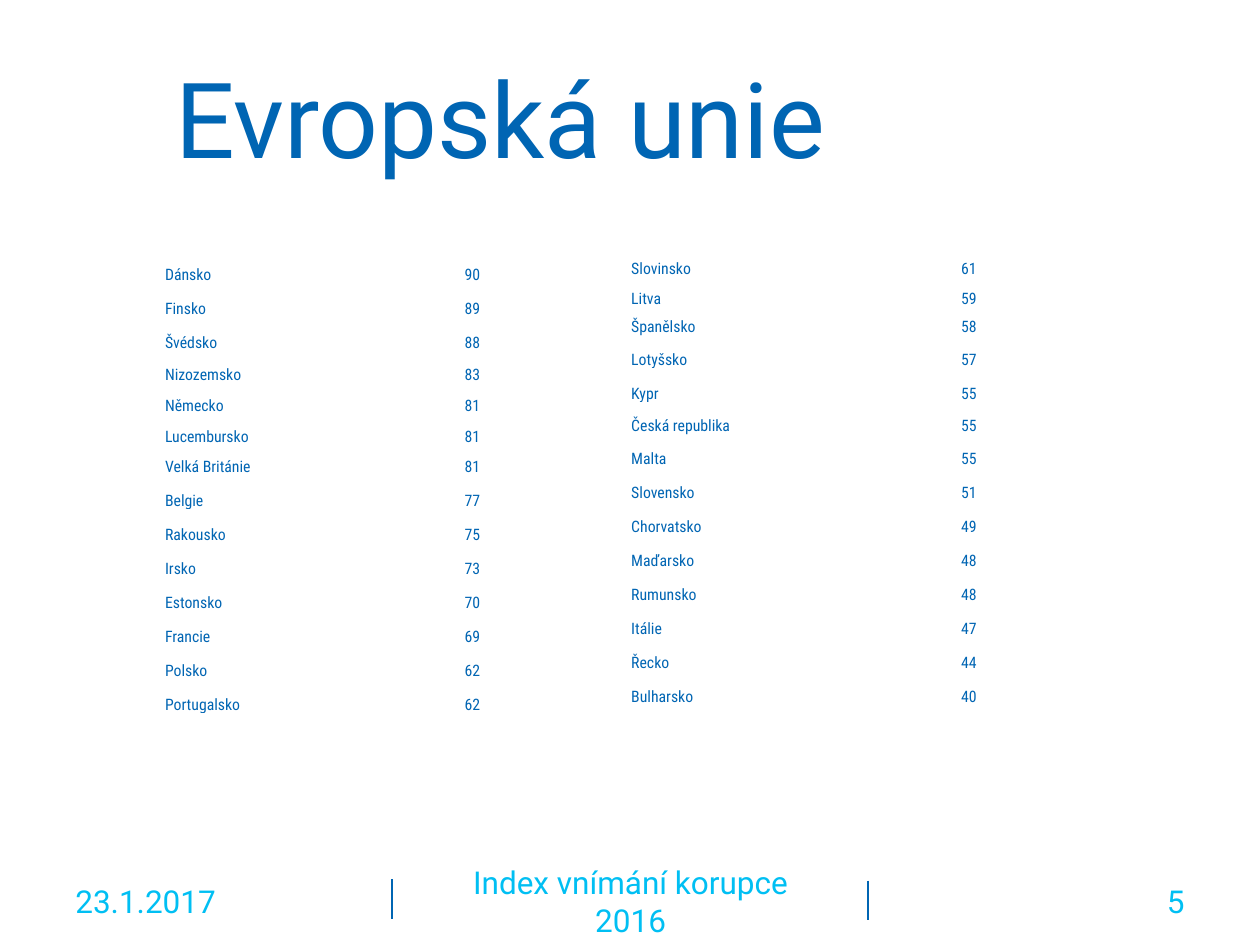
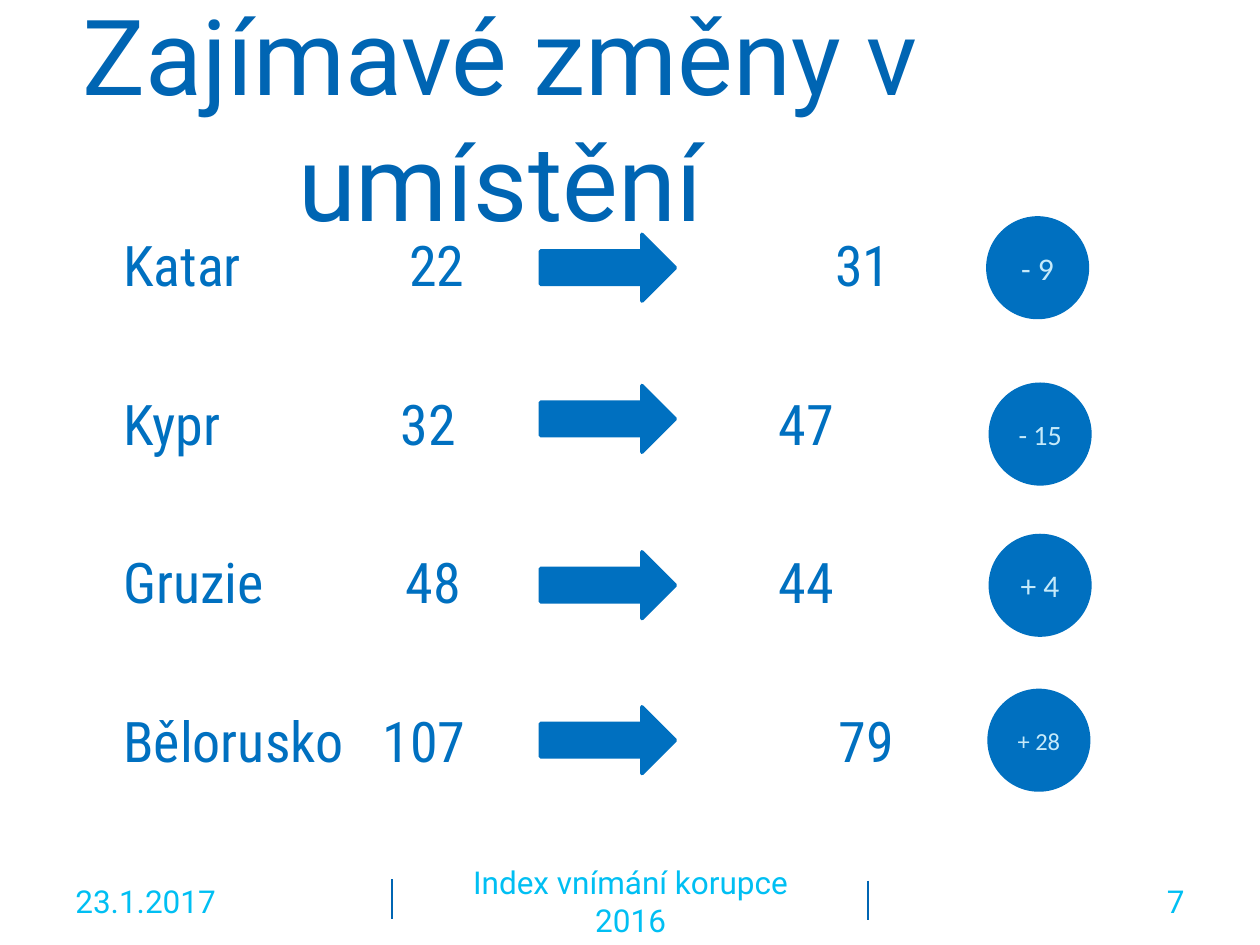
from lxml import etree
from pptx import Presentation
from pptx.dml.color import RGBColor
from pptx.enum import shapes, text
from pptx.oxml import ns
from pptx.util import Inches, Pt

NAVY = RGBColor(0x00, 0x65, 0xB3)
BLUE = RGBColor(0x00, 0x70, 0xC0)
CYAN = RGBColor(0x00, 0xBF, 0xF3)
PALE = RGBColor(0xC6, 0xEA, 0xFA)
WHITE = RGBColor(0xFF, 0xFF, 0xFF)
ROBOTO, CONDENSED, CALIBRI = "Roboto", "Roboto Condensed", "Calibri"
LEFT, CENTER, RIGHT = text.PP_ALIGN.LEFT, text.PP_ALIGN.CENTER, text.PP_ALIGN.RIGHT

EU_FIRST = [
    ("Dánsko", 90, 0.24), ("Finsko", 89, 0.27), ("Švédsko", 88, 0.27),
    ("Nizozemsko", 83, 0.25), ("Německo", 81, 0.25), ("Lucembursko", 81, 0.24),
    ("Velká Británie", 81, 0.24), ("Belgie", 77, 0.27), ("Rakousko", 75, 0.27),
    ("Irsko", 73, 0.27), ("Estonsko", 70, 0.27), ("Francie", 69, 0.27),
    ("Polsko", 62, 0.27), ("Portugalsko", 62, 0.27),
]
EU_SECOND = [
    ("Slovinsko", 61, 0.35), ("Litva", 59, 0.24), ("Španělsko", 58, 0.22),
    ("Lotyšsko", 57, 0.26), ("Kypr", 55, 0.27), ("Česká republika", 55, 0.26),
    ("Malta", 55, 0.26), ("Slovensko", 51, 0.27), ("Chorvatsko", 49, 0.27),
    ("Maďarsko", 48, 0.27), ("Rumunsko", 48, 0.27), ("Itálie", 47, 0.27),
    ("Řecko", 44, 0.27), ("Bulharsko", 40, 0.27),
]
RANKINGS = [
    ("Katar", 22, 31, (2.27, 5.65)),
    ("Kypr", 32, 47, (2.2, 5.2)),
    ("Gruzie", 48, 44, (2.24, 5.2)),
    ("Bělorusko", 107, 79, (2.06, 5.68)),
]
ARROW_TOPS = [1.86, 3.06, 4.38, 5.61]
BADGES = [
    ("- 9", 7.84, 1.73, 18), ("- 15", 7.86, 3.05, 16),
    ("+ 4", 7.86, 4.25, 18), ("+ 28", 7.85, 5.48, 14),
]


class Builder:
    def __init__(self):
        self.deck = Presentation()
        self.deck.slide_width = Inches(10)
        self.deck.slide_height = Inches(7.5)
        self.slide = None

    def new_slide(self, title, number):
        self.slide = self.deck.slides.add_slide(self.deck.slide_layouts[5])
        for x, top in ((3.11, 6.98), (6.89, 6.99)):
            self.divider(x, top, 0.31)
        box = self.slide.shapes.title
        box.left, box.top = Inches(0.5), Inches(0.3)
        box.width, box.height = Inches(6.94), Inches(1.25)
        box.text_frame.text = title
        box.text_frame.word_wrap = True
        box.text_frame.auto_size = text.MSO_AUTO_SIZE.NONE
        box.text_frame.vertical_anchor = text.MSO_ANCHOR.MIDDLE
        self.format(box.text_frame.paragraphs[0], 60, ROBOTO, NAVY, CENTER)
        for words, left, width, align in (
            ("23.1.2017", 0.5, 2.33, LEFT),
            ("Index vnímání korupce 2016", 3.42, 3.17, CENTER),
            (str(number), 7.17, 2.33, RIGHT),
        ):
            frame = self.text_box(left, 6.95, width, 0.4)
            frame.vertical_anchor = text.MSO_ANCHOR.MIDDLE
            frame.text = words
            self.format(frame.paragraphs[0], 18, ROBOTO, CYAN, align)

    def format(self, paragraph, size, font, color, align=LEFT):
        paragraph.alignment = align
        for span in paragraph.runs:
            span.font.size = Pt(size)
            span.font.name = font
            span.font.color.rgb = color

    def text_box(self, left, top, width, height):
        box = self.slide.shapes.add_textbox(
            Inches(left), Inches(top), Inches(width), Inches(height))
        box.text_frame.word_wrap = True
        return box.text_frame

    def divider(self, x, top, length):
        line = self.slide.shapes.add_connector(
            shapes.MSO_CONNECTOR.STRAIGHT,
            Inches(x), Inches(top), Inches(x), Inches(top + length))
        line.line.color.rgb = NAVY
        line.line.width = Pt(1.5)
        properties = line._element.find(ns.qn("p:spPr"))
        etree.SubElement(properties, ns.qn("a:effectLst"))

    def shape(self, kind, left, top, width, height):
        shape = self.slide.shapes.add_shape(
            kind, Inches(left), Inches(top), Inches(width), Inches(height))
        shape.shadow.inherit = False
        shape.fill.solid()
        shape.fill.fore_color.rgb = BLUE
        shape.line.color.rgb = BLUE
        shape.line.width = Pt(2)
        return shape

    def badge(self, words, left, top, size):
        frame = self.shape(shapes.MSO_SHAPE.OVAL, left, top, 0.79, 0.79).text_frame
        frame.vertical_anchor = text.MSO_ANCHOR.MIDDLE
        frame.text = words
        self.format(frame.paragraphs[0], size, CALIBRI, PALE, CENTER)

    def score_table(self, rows, left, top, widths):
        height = sum(row[2] for row in rows)
        table = self.slide.shapes.add_table(
            len(rows), 2, Inches(left), Inches(top),
            Inches(sum(widths)), Inches(height)).table
        table.first_row = table.horz_banding = False
        for column, width in zip(table.columns, widths):
            column.width = Inches(width)
        for index, (country, score, row_height) in enumerate(rows):
            table.rows[index].height = Inches(row_height)
            self.cell(table.cell(index, 0), country, LEFT)
            self.cell(table.cell(index, 1), str(score), RIGHT)

    def cell(self, cell, words, align):
        cell.margin_left = cell.margin_right = cell.margin_top = Inches(0.01)
        cell.margin_bottom = 0
        cell.vertical_anchor = text.MSO_ANCHOR.BOTTOM
        cell.fill.solid()
        cell.fill.fore_color.rgb = WHITE
        cell.text_frame.text = words
        self.format(cell.text_frame.paragraphs[0], 9, CONDENSED, NAVY, align)

    def ranking_list(self, rankings):
        frame = self.text_box(0.88, 1.78, 8.6, 4.9)
        for index, (country, before, after, stops) in enumerate(rankings):
            paragraph = frame.add_paragraph() if index else frame.paragraphs[0]
            paragraph.text = f"{country}\t{before}\t{after}"
            if index:
                paragraph.space_before = Pt(52.2)
            tabs = etree.SubElement(
                paragraph._p.get_or_add_pPr(), ns.qn("a:tabLst"))
            for stop in stops:
                etree.SubElement(
                    tabs, ns.qn("a:tab"), pos=str(Inches(stop)), algn="l")
            self.format(paragraph, 32, CONDENSED, BLUE)


def main():
    builder = Builder()

    builder.new_slide("Evropská unie", 5)
    builder.score_table(EU_FIRST, 1.3, 2.02, (1.26, 1.26))
    builder.score_table(EU_SECOND, 5, 1.86, (1.26, 1.5))

    builder.new_slide("Zajímavé změny v umístění", 7)
    builder.ranking_list(RANKINGS)
    for top in ARROW_TOPS:
        builder.shape(shapes.MSO_SHAPE.RIGHT_ARROW, 4.29, top, 1.07, 0.53)
    for badge in BADGES:
        builder.badge(*badge)

    builder.deck.save("out.pptx")


if __name__ == "__main__":
    main()
